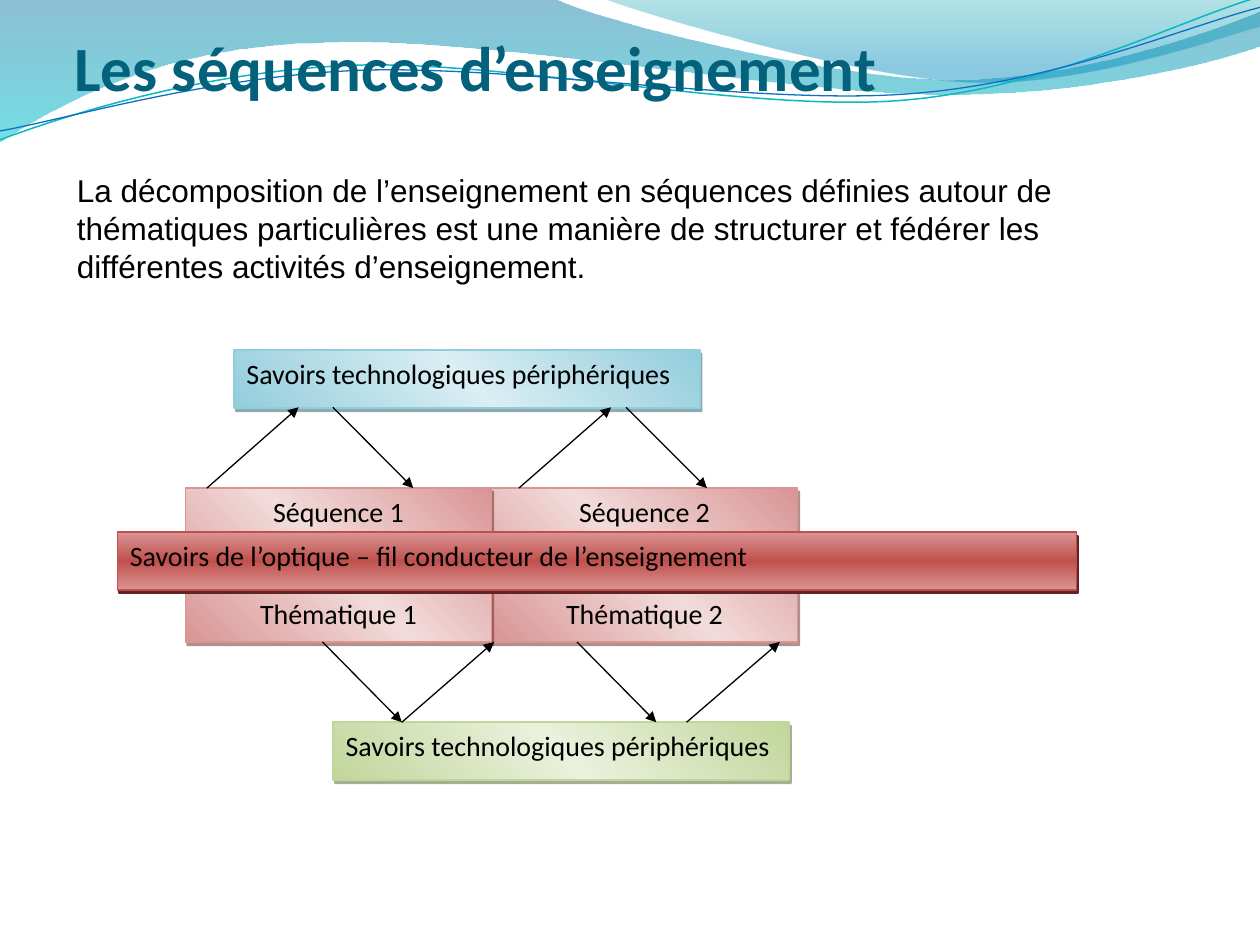
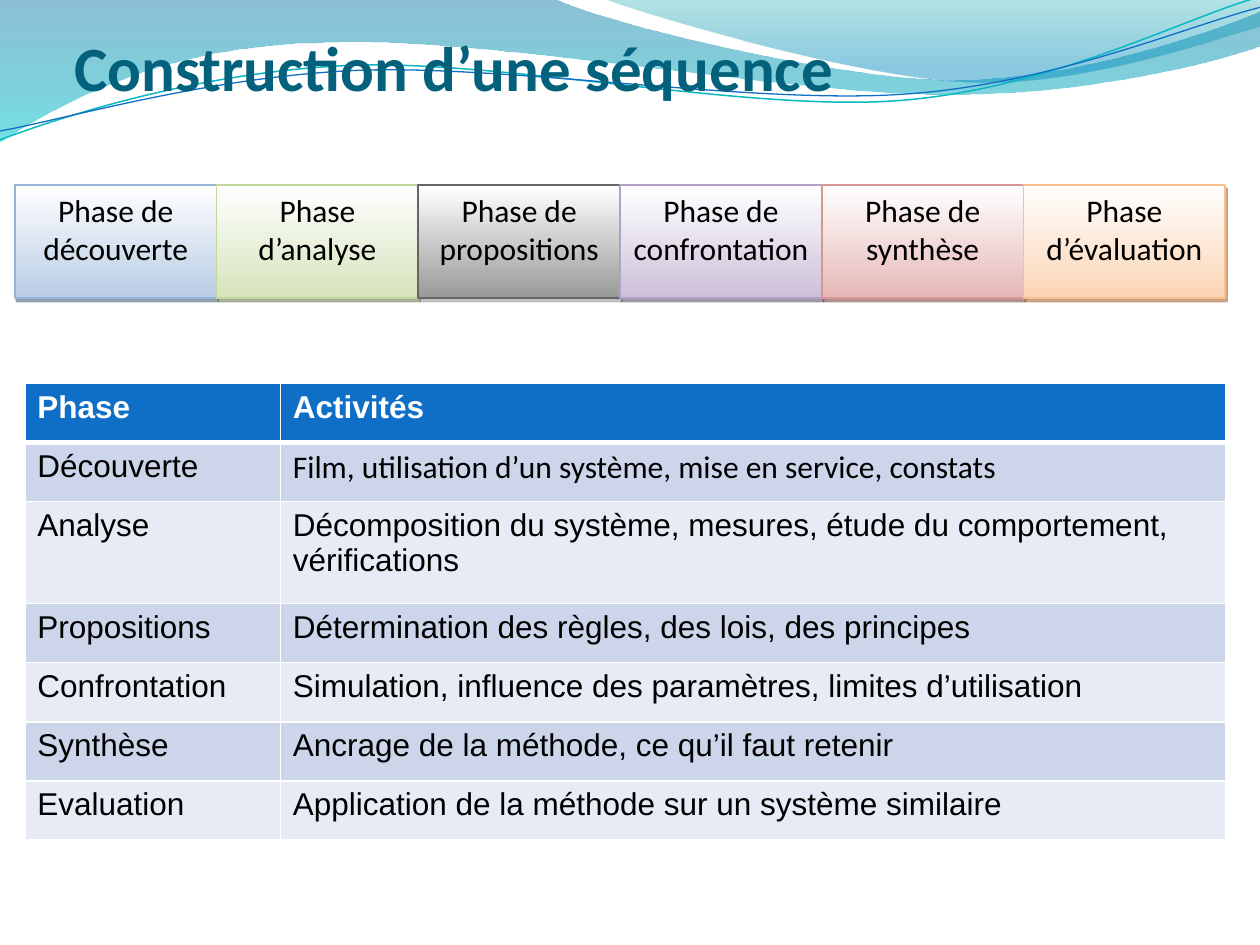
from dataclasses import dataclass

from lxml import etree
from pptx import Presentation
from pptx.dml.color import RGBColor
from pptx.enum.shapes import MSO_CONNECTOR, MSO_SHAPE
from pptx.enum.text import MSO_ANCHOR, MSO_AUTO_SIZE, PP_ALIGN
from pptx.oxml.ns import qn
from pptx.util import Cm, Pt

RECT = MSO_SHAPE.RECTANGLE
PROCESS = MSO_SHAPE.FLOWCHART_PROCESS
STRAIGHT = MSO_CONNECTOR.STRAIGHT
LEFT, CENTER = PP_ALIGN.LEFT, PP_ALIGN.CENTER
TOP, BOTTOM = MSO_ANCHOR.TOP, MSO_ANCHOR.BOTTOM
NO_FIT = MSO_AUTO_SIZE.NONE

HEADING_FONT, BODY_FONT = "Calibri", "Arial"
TITLE_ONLY = 5

BLACK = RGBColor(0x00, 0x00, 0x00)
WHITE = RGBColor(0xFF, 0xFF, 0xFF)
TITLE_TEAL = RGBColor(0x04, 0x61, 0x7B)
HEADER_BLUE = RGBColor(0x0F, 0x6F, 0xC6)
ROW_DARK = RGBColor(0xCC, 0xD5, 0xEA)
ROW_LIGHT = RGBColor(0xE7, 0xEB, 0xF5)
WAVE_BLUE = RGBColor(0x00, 0x74, 0xA1)
WAVE_CYAN = RGBColor(0x00, 0xC6, 0xCF)
WAVE_TEAL = RGBColor(0x00, 0xA1, 0xA9)
WAVE_SKY = RGBColor(0x00, 0x8B, 0xBF)
THREAD_TEAL = RGBColor(0x0A, 0xB8, 0xBF)
RED_DEEP = RGBColor(0x62, 0x24, 0x23)
RED = RGBColor(0xC0, 0x50, 0x4D)
RED_SOFT = RGBColor(0xD9, 0x95, 0x94)
RED_MID = RGBColor(0xE5, 0xB8, 0xB7)
RED_PALE = RGBColor(0xF2, 0xDB, 0xDB)
AQUA_DEEP = RGBColor(0x20, 0x58, 0x67)
AQUA_SOFT = RGBColor(0x92, 0xCD, 0xDC)
AQUA_PALE = RGBColor(0xDA, 0xEE, 0xF3)
GREEN_DEEP = RGBColor(0x4E, 0x61, 0x28)
GREEN_SOFT = RGBColor(0xC2, 0xD6, 0x9B)
GREEN_MID = RGBColor(0xD6, 0xE3, 0xBC)
GREEN_PALE = RGBColor(0xEA, 0xF1, 0xDD)
BLUE_DEEP = RGBColor(0x24, 0x3F, 0x60)
BLUE_SOFT = RGBColor(0x95, 0xB3, 0xD7)
BLUE_MID = RGBColor(0xB8, 0xCC, 0xE4)
GREY_DEEP = RGBColor(0x7F, 0x7F, 0x7F)
GREY_SOFT = RGBColor(0x66, 0x66, 0x66)
GREY_MID = RGBColor(0x99, 0x99, 0x99)
PURPLE_DEEP = RGBColor(0x3F, 0x31, 0x51)
PURPLE_SOFT = RGBColor(0xB2, 0xA1, 0xC7)
PURPLE_MID = RGBColor(0xCC, 0xC0, 0xD9)
ORANGE_DEEP = RGBColor(0x97, 0x47, 0x06)
ORANGE_SOFT = RGBColor(0xFA, 0xBF, 0x8F)
ORANGE_MID = RGBColor(0xFB, 0xD4, 0xB4)


@dataclass(frozen=True)
class Stop:
    pos: int
    color: RGBColor
    opacity: int = 100


@dataclass(frozen=True)
class Look:
    stops: tuple[Stop, ...]
    angle: int
    line: RGBColor
    shadow: RGBColor
    shadow_opacity: int = 50


@dataclass(frozen=True)
class Box:
    x: float
    y: float
    w: float
    h: float
    lines: tuple[str, ...]
    look: Look
    shape: int = PROCESS
    align: int = LEFT
    size: int = 16


@dataclass(frozen=True)
class Wave:
    points: tuple[tuple[float, ...], ...]
    stops: tuple[Stop, ...] = ()
    line: RGBColor | None = None
    width: float = 0.75


def mirrored(edge: RGBColor, middle: RGBColor) -> tuple[Stop, ...]:
    return Stop(0, edge), Stop(50, middle), Stop(100, edge)


def fade(color: RGBColor, line: RGBColor, shadow: RGBColor) -> Look:
    return Look((Stop(0, WHITE), Stop(100, color)), 90, line, shadow)


SEQUENCE = Look(mirrored(RED_SOFT, RED_PALE), 315, RED_SOFT, RED_DEEP)
AQUA = Look(mirrored(AQUA_SOFT, AQUA_PALE), 315, AQUA_SOFT, AQUA_DEEP)
GREEN = Look(mirrored(GREEN_SOFT, GREEN_PALE), 315, GREEN_SOFT, GREEN_DEEP)
OPTICS = Look(mirrored(RED_SOFT, RED), 90, RED, RED_DEEP, 100)

WAVES = (
    Wave(((0, -0.03), (11.18, -0.03),
          (12.09, 0.43, 16.87, 1.6, 19.25, 1.6),
          (21.67, 1.6, 24.33, 0.66, 25.4, 0.23), (25.43, 0.91),
          (24.97, 1.12, 22.1, 1.93, 18.95, 1.9),
          (15.8, 1.9, 9.7, 0.71, 6.53, 0.86),
          (3.28, 0.89, 1.17, 2.11, -0.03, 2.87), (0, -0.03)),
         (Stop(0, WAVE_BLUE, 45), Stop(100, WAVE_CYAN, 55))),
    Wave(((12.17, -0.03), (12.93, 0.28, 17.32, 1.57, 19.53, 1.65),
          (21.74, 1.75, 24.41, 0.81, 25.4, 0.53), (25.4, 0), (12.17, -0.03)),
         (Stop(0, WAVE_TEAL, 30), Stop(80, WAVE_SKY, 45))),
    Wave(((0, 2.82), (1.22, 2.36, 4.01, 1.45, 7.04, 1.32),
          (10.03, 1.19, 15.06, 2.26, 18.11, 2.03),
          (21.16, 1.8, 23.83, 0.38, 25.35, -0.05)),
         line=THREAD_TEAL, width=0.85),
    Wave(((0, 2.64), (1.19, 2.44, 4.17, 1.55, 7.19, 1.42),
          (10.24, 1.3, 15.16, 2.11, 18.21, 1.9),
          (21.23, 1.7, 23.9, 0.53, 25.4, 0.15)),
         line=HEADER_BLUE),
)

INTRO = ("La décomposition de l’enseignement en séquences définies autour de "
         "thématiques particulières est une manière de structurer et fédérer les "
         "différentes activités d’enseignement.")
PERIPHERAL = ("Savoirs technologiques périphériques",)
KNOWLEDGE_BOXES = (
    Box(9.91, 9.84, 6.17, 3.1, ("Séquence 2", "Thématique 2"), SEQUENCE, align=CENTER),
    Box(3.74, 9.84, 6.17, 3.1, ("Séquence 1", "Thématique 1"), SEQUENCE, align=CENTER),
    Box(4.72, 7.06, 9.39, 1.16, PERIPHERAL, AQUA),
    Box(2.37, 10.73, 19.33, 1.16,
        ("Savoirs de l’optique – fil conducteur de l’enseignement",), OPTICS),
    Box(6.72, 14.56, 9.19, 1.16, PERIPHERAL, GREEN),
)
AQUA_EDGE, SEQUENCE_TOP, SEQUENCE_BASE, GREEN_EDGE = 8.21, 9.84, 12.94, 14.56
ARROWS = (
    (SEQUENCE_TOP, AQUA_EDGE, ((4.17, 6.02), (10.46, 12.32))),
    (AQUA_EDGE, SEQUENCE_TOP, ((6.71, 8.33), (12.62, 14.25))),
    (SEQUENCE_BASE, GREEN_EDGE, ((6.5, 8.1), (11.63, 13.23))),
    (GREEN_EDGE, SEQUENCE_BASE, ((8.1, 9.96), (13.84, 15.72))),
)

PHASES = (
    ("Phase de découverte", fade(BLUE_MID, BLUE_SOFT, BLUE_DEEP)),
    ("Phase d’analyse", fade(GREEN_MID, GREEN_SOFT, GREEN_DEEP)),
    ("Phase de propositions", fade(GREY_MID, GREY_SOFT, GREY_DEEP)),
    ("Phase de confrontation", fade(PURPLE_MID, PURPLE_SOFT, PURPLE_DEEP)),
    ("Phase de synthèse", fade(RED_MID, RED_SOFT, RED_DEEP)),
    ("Phase d’évaluation", fade(ORANGE_MID, ORANGE_SOFT, ORANGE_DEEP)),
)
PHASE_WIDTH = 24.4 / len(PHASES)
ACTIVITIES = (
    ("Phase", "Activités"),
    ("Découverte", "Film, utilisation d’un système, mise en service, constats"),
    ("Analyse", "Décomposition du système, mesures, étude du comportement, vérifications"),
    ("Propositions", "Détermination des règles, des lois, des principes"),
    ("Confrontation", "Simulation, influence des paramètres, limites d’utilisation"),
    ("Synthèse", "Ancrage de la méthode, ce qu’il faut retenir"),
    ("Evaluation", "Application de la méthode sur un système similaire"),
)
COLUMN_WIDTHS = (5.15, 19.05)
ROW_HEIGHT, TALL_ROW_HEIGHT, TALL_ROW = 1.19, 2.06, 2


def cm(*values: float) -> list[Cm]:
    return [Cm(v) for v in values]


def format_text(tf, size: int, font: str, color: RGBColor = BLACK,
                bold: bool = False, align: int = LEFT) -> None:
    for p in tf.paragraphs:
        p.alignment = align
        for r in p.runs:
            r.font.size, r.font.name, r.font.bold = Pt(size), font, bold
            r.font.color.rgb = color


def add_color(parent, color: RGBColor, opacity: int = 100) -> None:
    clr = etree.SubElement(parent, qn("a:srgbClr"), val=str(color))
    if opacity < 100:
        etree.SubElement(clr, qn("a:alpha"), val=str(opacity * 1000))


def fill_gradient(sp, stops: tuple[Stop, ...], angle: int) -> None:
    sp.fill.gradient()
    sp.fill.gradient_angle = 360 - angle
    gs_list = sp.element.spPr.find(qn("a:gradFill")).find(qn("a:gsLst"))
    gs_list.clear()
    for stop in stops:
        gs = etree.SubElement(gs_list, qn("a:gs"), pos=str(stop.pos * 1000))
        add_color(gs, stop.color, stop.opacity)


def add_shadow(sp, color: RGBColor, opacity: int) -> None:
    sp.shadow.inherit = False
    effects = sp.element.spPr.find(qn("a:effectLst"))
    shadow = etree.SubElement(effects, qn("a:outerShdw"), blurRad="0",
                              dist=str(Pt(2.2)), dir=str(63 * 60000),
                              algn="ctr", rotWithShape="0")
    add_color(shadow, color, opacity)


def bend_segments(sp, points: tuple[tuple[float, ...], ...]) -> None:
    segments = list(sp.element.iter(qn("a:lnTo")))
    for segment, point in zip(segments, points[1:]):
        if len(point) == 2:
            continue
        segment.tag = qn("a:cubicBezTo")
        for i, (x, y) in enumerate((point[:2], point[2:4])):
            pt = etree.Element(qn("a:pt"), x=str(Cm(x) - sp.left), y=str(Cm(y) - sp.top))
            segment.insert(i, pt)


def add_wave(s, wave: Wave):
    start, *rest = [tuple(cm(*point[-2:])) for point in wave.points]
    builder = s.shapes.build_freeform(*start)
    builder.add_line_segments(rest, close=bool(wave.stops))
    sp = builder.convert_to_shape()
    bend_segments(sp, wave.points)
    sp.shadow.inherit = False
    if wave.stops:
        fill_gradient(sp, wave.stops, 90)
        sp.line.fill.background()
    else:
        sp.fill.background()
        sp.line.color.rgb, sp.line.width = wave.line, Pt(wave.width)
    return sp


def add_waves_to_layout(s) -> None:
    tree = s.slide_layout.shapes.element
    for i, wave in enumerate(WAVES):
        tree.insert(2 + i, add_wave(s, wave).element)


def set_title(s, text: str) -> None:
    sp = s.shapes.title
    sp.left, sp.top, sp.width, sp.height = cm(1.5, 0.31, 22.86, 1.78)
    tf = sp.text_frame
    tf.text = text
    tf.auto_size, tf.vertical_anchor = NO_FIT, BOTTOM
    tf.margin_left, tf.margin_top, tf.margin_right, tf.margin_bottom = cm(0, 0.13, 0, 0)
    format_text(tf, 36, HEADING_FONT, TITLE_TEAL, bold=True)


def add_box(s, box: Box) -> None:
    sp = s.shapes.add_shape(box.shape, *cm(box.x, box.y, box.w, box.h))
    fill_gradient(sp, box.look.stops, box.look.angle)
    sp.line.color.rgb, sp.line.width = box.look.line, Pt(1)
    add_shadow(sp, box.look.shadow, box.look.shadow_opacity)
    tf = sp.text_frame
    tf.text = "\n".join(box.lines)
    tf.word_wrap, tf.vertical_anchor = True, TOP
    format_text(tf, box.size, HEADING_FONT, align=box.align)
    for p in tf.paragraphs[1:]:
        p.space_before = Pt(39)


def add_arrow(s, x1: float, y1: float, x2: float, y2: float) -> None:
    c = s.shapes.add_connector(STRAIGHT, *cm(x1, y1, x2, y2))
    c.line.color.rgb, c.line.width = BLACK, Pt(0.75)
    spPr = c.element.spPr
    etree.SubElement(spPr.find(qn("a:ln")), qn("a:tailEnd"), type="triangle")
    etree.SubElement(spPr, qn("a:effectLst"))


def set_borders(cell, top: int, bottom: int) -> None:
    tcPr = cell._tc.get_or_add_tcPr()
    for i, (side, width) in enumerate((("L", 1), ("R", 1), ("T", top), ("B", bottom))):
        ln = etree.Element(qn(f"a:ln{side}"), w=str(Pt(width)))
        add_color(etree.SubElement(ln, qn("a:solidFill")), WHITE)
        tcPr.insert(i, ln)


def add_activity_table(s) -> None:
    height = ROW_HEIGHT * (len(ACTIVITIES) - 1) + TALL_ROW_HEIGHT
    table = s.shapes.add_table(len(ACTIVITIES), len(COLUMN_WIDTHS),
                               *cm(0.5, 7.73, sum(COLUMN_WIDTHS), height)).table
    table.horz_banding = False
    for column, width in zip(table.columns, COLUMN_WIDTHS):
        column.width = Cm(width)
    for i, texts in enumerate(ACTIVITIES):
        header = i == 0
        table.rows[i].height = Cm(TALL_ROW_HEIGHT if i == TALL_ROW else ROW_HEIGHT)
        for j, text in enumerate(texts):
            cell = table.cell(i, j)
            cell.text = text
            cell.fill.solid()
            cell.fill.fore_color.rgb = (HEADER_BLUE if header
                                        else ROW_DARK if i % 2 else ROW_LIGHT)
            font = HEADING_FONT if (i, j) == (1, 1) else BODY_FONT
            format_text(cell.text_frame, 18, font, WHITE if header else BLACK, header)
            set_borders(cell, 3 if i == 1 else 1, 3 if header else 1)


def build_sequences(s) -> None:
    set_title(s, "Les séquences d’enseignement")
    tf = s.shapes.add_textbox(*cm(1.3, 3.33, 22.61, 2.57)).text_frame
    tf.text, tf.word_wrap = INTRO, True
    format_text(tf, 18, BODY_FONT)
    for box in KNOWLEDGE_BOXES:
        add_box(s, box)
    for y1, y2, spans in ARROWS:
        for x1, x2 in spans:
            add_arrow(s, x1, y1, x2, y2)


def build_construction(s) -> None:
    set_title(s, "Construction d’une séquence")
    for i, (text, look) in enumerate(PHASES):
        add_box(s, Box(0.3 + i * PHASE_WIDTH, 3.73, PHASE_WIDTH, 2.28,
                       (text,), look, RECT, CENTER, 18))
    add_activity_table(s)


def main() -> None:
    prs = Presentation()
    prs.slide_width, prs.slide_height = cm(25.4, 19.05)
    layout = prs.slide_layouts[TITLE_ONLY]
    sequences, construction = (prs.slides.add_slide(layout) for _ in range(2))
    add_waves_to_layout(sequences)
    build_sequences(sequences)
    build_construction(construction)
    prs.save("out.pptx")


if __name__ == "__main__":
    main()
